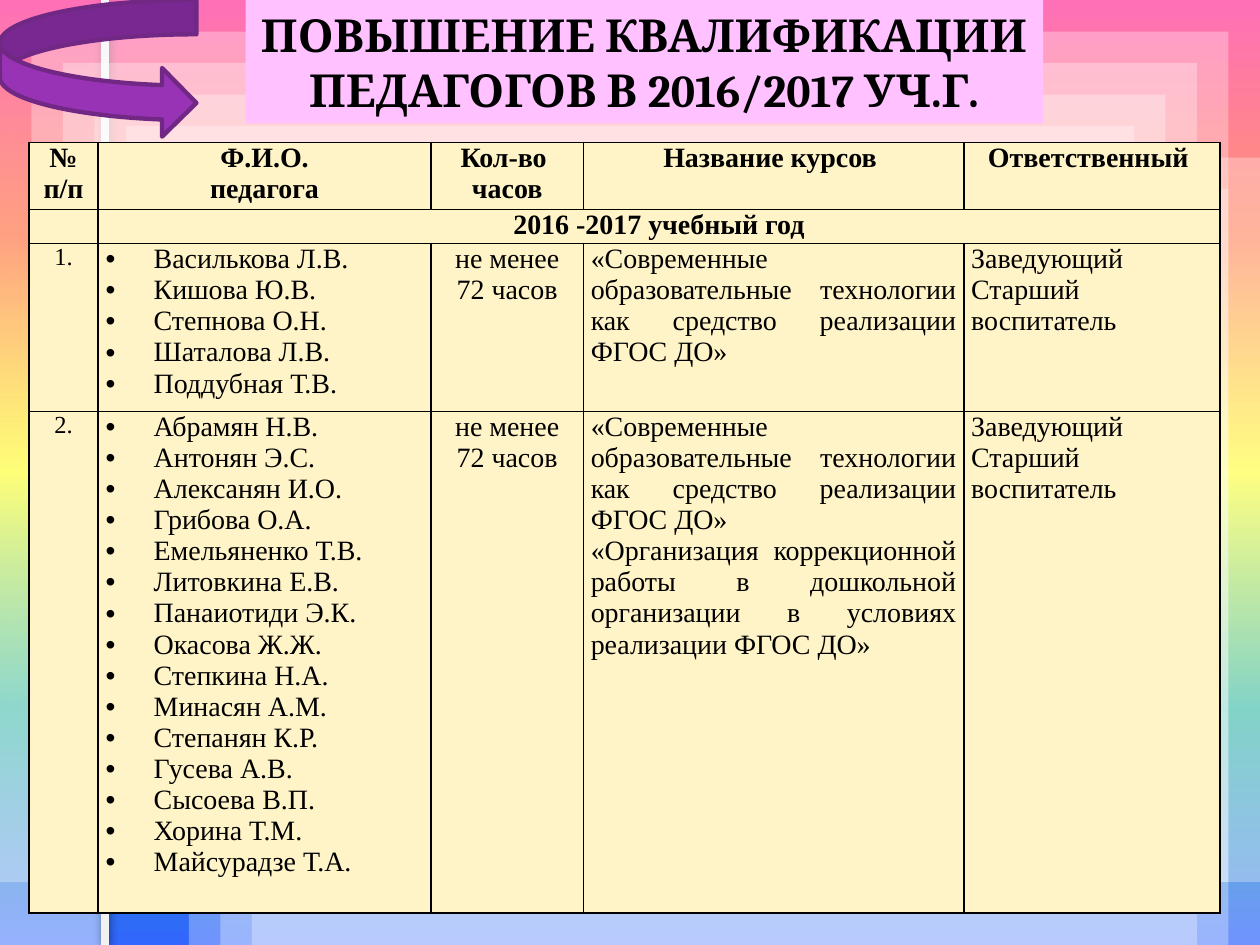
from dataclasses import dataclass
from typing import Any

from lxml import etree
from pptx import Presentation
from pptx.dml.color import RGBColor
from pptx.enum.shapes import MSO_CONNECTOR, MSO_SHAPE
from pptx.enum.text import MSO_ANCHOR, MSO_AUTO_SIZE, PP_ALIGN
from pptx.oxml.ns import qn
from pptx.util import Cm, Pt

CENTER, JUSTIFY, LEFT = PP_ALIGN.CENTER, PP_ALIGN.JUSTIFY, PP_ALIGN.LEFT
RECTANGLE, CURVED_ARROW = MSO_SHAPE.RECTANGLE, MSO_SHAPE.CURVED_RIGHT_ARROW
WIDTH, HEIGHT = 25.4, 19.05
STEP = WIDTH / 40  # offset between nested frames
INDENT = 0.97

TITLE = "ПОВЫШЕНИЕ КВАЛИФИКАЦИИ ПЕДАГОГОВ В 2016/2017 УЧ.Г."
HOURS = ["не менее", "72 часов"]
MODERN = "«Современные образовательные технологии как средство реализации ФГОС ДО» "
CORRECTION = ("«Организация коррекционной работы в дошкольной организации "
              "в условиях реализации ФГОС ДО»")
STAFF = ["Заведующий", "Старший воспитатель"]
HEADER = [["№ п/п"], ["Ф.И.О.", "педагога"], ["Кол-во ", "часов"],
          ["Название курсов "], ["Ответственный "]]
YEAR = [[""], ["2016 -2017 учебный год"]]
GROUP_1 = ["Василькова Л.В.", "Кишова Ю.В.", "Степнова О.Н.", "Шаталова Л.В.",
           "Поддубная Т.В."]
GROUP_2 = ["Абрамян Н.В.", "Антонян Э.С.", "Алексанян И.О.", "Грибова О.А.",
           "Емельяненко Т.В.", "Литовкина Е.В.", "Панаиотиди Э.К.", "Окасова Ж.Ж.",
           "Степкина Н.А.", "Минасян А.М.", "Степанян К.Р.", "Гусева А.В.",
           "Сысоева В.П.", "Хорина Т.М.", "Майсурадзе Т.А."]
ROWS = [HEADER, YEAR,
        [["1."], GROUP_1, HOURS, [MODERN], STAFF],
        [["2."], GROUP_2, HOURS, [MODERN, CORRECTION], STAFF]]
COLUMN_WIDTHS = [1.4, 6.71, 3.07, 7.67, 5.16]
ROW_HEIGHTS = [1.35, 0.69, 3.38, 10.11]
HEAD_FORMAT = {"bold": True, "align": CENTER}
COLUMN_FORMATS = [{"size": 14, "align": CENTER}, {"align": JUSTIFY, "bullet": True},
                  {"align": CENTER}, {"align": JUSTIFY}, {"align": LEFT}]


def color(value):
    return RGBColor.from_string(value)


def add_element(parent, tag, **attributes):
    return etree.SubElement(parent, qn(tag), {k: str(v) for k, v in attributes.items()})


def add_color(parent, value, alpha=100):
    element = add_element(parent, "a:srgbClr", val=value)
    if alpha < 100:
        add_element(element, "a:alpha", val=alpha * 1000)


def set_gradient(fill, element, stops, angle):
    fill.gradient()
    stop_list = element.find(".//" + qn("a:gsLst"))
    for stop in list(stop_list):
        stop_list.remove(stop)
    for position, value, alpha in stops:
        add_color(add_element(stop_list, "a:gs", pos=position * 1000), value, alpha)
    element.find(".//" + qn("a:lin")).set("ang", str(angle * 60000))


def write(frame, lines, font="Times New Roman", size=16, bold=False, align=LEFT,
          text_color="000000", bullet=False):
    for index, line in enumerate(lines):
        paragraph = frame.paragraphs[0] if index == 0 else frame.add_paragraph()
        paragraph.alignment = align
        if not line:
            add_element(paragraph._p, "a:endParaRPr", sz=size * 100)
            continue
        if bullet:
            properties = paragraph._p.get_or_add_pPr()
            properties.set("marL", str(Cm(INDENT)))
            properties.set("indent", str(-Cm(INDENT)))
            add_element(properties, "a:buFont", typeface="Arial")
            add_element(properties, "a:buChar", char="•")
        run = paragraph.add_run()
        run.text = line
        run.font.name, run.font.size, run.font.bold = font, Pt(size), bold
        run.font.color.rgb = color(text_color)


@dataclass
class SlideBuilder:
    slide: Any
    title_font: str = "Cambria"
    title_fill: str = "FFC1FF"
    cell_fill: str = "FFF4C8"
    border: str = "000000"

    def background(self, stops):
        set_gradient(self.slide.background.fill, self.slide.element, stops, 90)

    def shape(self, kind, left, top, width, height, fill=None, alpha=100,
              line=None, line_width=1):
        shape = self.slide.shapes.add_shape(kind, Cm(left), Cm(top), Cm(width), Cm(height))
        shape.shadow.inherit = False
        if fill:
            shape.fill.solid()
            shape.fill.fore_color.rgb = color(fill)
        if alpha < 100:
            fill_color = shape.element.spPr.find(".//" + qn("a:srgbClr"))
            add_element(fill_color, "a:alpha", val=alpha * 1000)
        if line:
            shape.line.color.rgb = color(line)
            shape.line.width = Pt(line_width)
        else:
            shape.line.fill.background()
        return shape

    def frame(self, left, top, width, height):
        self.shape(RECTANGLE, left * STEP, top * STEP, width * STEP, height * STEP,
                   fill="FFFFFF", alpha=30)

    def line(self, x, top, bottom, line_color, width):
        line = self.slide.shapes.add_connector(
            MSO_CONNECTOR.STRAIGHT, Cm(x), Cm(top), Cm(x), Cm(bottom))
        line.line.color.rgb = color(line_color)
        line.line.width = Pt(width)
        effects = add_element(line.element.spPr, "a:effectLst")
        shadow = add_element(effects, "a:outerShdw", blurRad=Pt(5), dist=0, dir=0)
        add_color(shadow, "000000", 40)

    def title(self, text, left, top, width, height):
        title = self.slide.shapes.title
        title.left, title.top = Cm(left), Cm(top)
        title.width, title.height = Cm(width), Cm(height)
        title.fill.solid()
        title.fill.fore_color.rgb = color(self.title_fill)
        frame = title.text_frame
        frame.word_wrap = True
        frame.auto_size = MSO_AUTO_SIZE.NONE
        frame.vertical_anchor = MSO_ANCHOR.MIDDLE
        write(frame, [text], font=self.title_font, size=26, bold=True, align=CENTER)
        # Bring the title in front of the frames
        title.element.getparent().append(title.element)

    def cell(self, cell):
        cell.margin_left = cell.margin_right = Cm(0.15)
        cell.margin_top = cell.margin_bottom = 0
        properties = cell._tc.get_or_add_tcPr()
        for side in ("a:lnL", "a:lnR", "a:lnT", "a:lnB"):
            line = add_element(properties, side, w=Pt(1))
            add_color(add_element(line, "a:solidFill"), self.border)
        cell.fill.solid()
        cell.fill.fore_color.rgb = color(self.cell_fill)

    def table(self, left, top, widths, heights, rows):
        table = self.slide.shapes.add_table(
            len(heights), len(widths), Cm(left), Cm(top),
            Cm(sum(widths)), Cm(sum(heights))).table
        table.first_row = table.horz_banding = False
        for column, width in zip(table.columns, widths):
            column.width = Cm(width)
        for row, height in zip(table.rows, heights):
            row.height = Cm(height)
        for cell in table.iter_cells():
            self.cell(cell)
        table.cell(1, 1).merge(table.cell(1, len(widths) - 1))
        for row_index, row in enumerate(rows):
            for column_index, lines in enumerate(row):
                style = HEAD_FORMAT if row_index < 2 else COLUMN_FORMATS[column_index]
                write(table.cell(row_index, column_index).text_frame, lines, **style)


def main():
    presentation = Presentation()
    presentation.slide_width, presentation.slide_height = Cm(WIDTH), Cm(HEIGHT)
    builder = SlideBuilder(presentation.slides.add_slide(presentation.slide_layouts[5]))

    # Rainbow background with translucent nested frames
    builder.background([(0, "FF3399", 100), (25, "FF6633", 100), (50, "FFFF00", 100),
                        (75, "01A78F", 100), (100, "3366FF", 100)])
    for i in range(3):
        builder.frame(6 + i, 5 + i, 34 - 2 * i, 25 - i)
    side_band = builder.shape(RECTANGLE, 0, 0, 2.16, HEIGHT)
    set_gradient(side_band.fill, side_band.element,
                 [(0, "FFFFFF", 50), (100, "FFFFFF", 0)], 270)
    builder.line(2.11, 0, HEIGHT, "F1F1F1", 4.5)
    for i in range(6):
        builder.frame(i, i, 40 - 2 * i, 28 - i)

    # Heading and arrow
    builder.title(TITLE, 4.95, 0, 16.08, 2.49)
    builder.shape(CURVED_ARROW, 0, 0, 3.96, 2.77, fill="9933B6",
                  line="702884", line_width=2.5)

    # Training schedule
    builder.table(0.58, 2.87, COLUMN_WIDTHS, ROW_HEIGHTS, ROWS)
    presentation.save("out.pptx")


if __name__ == "__main__":
    main()
